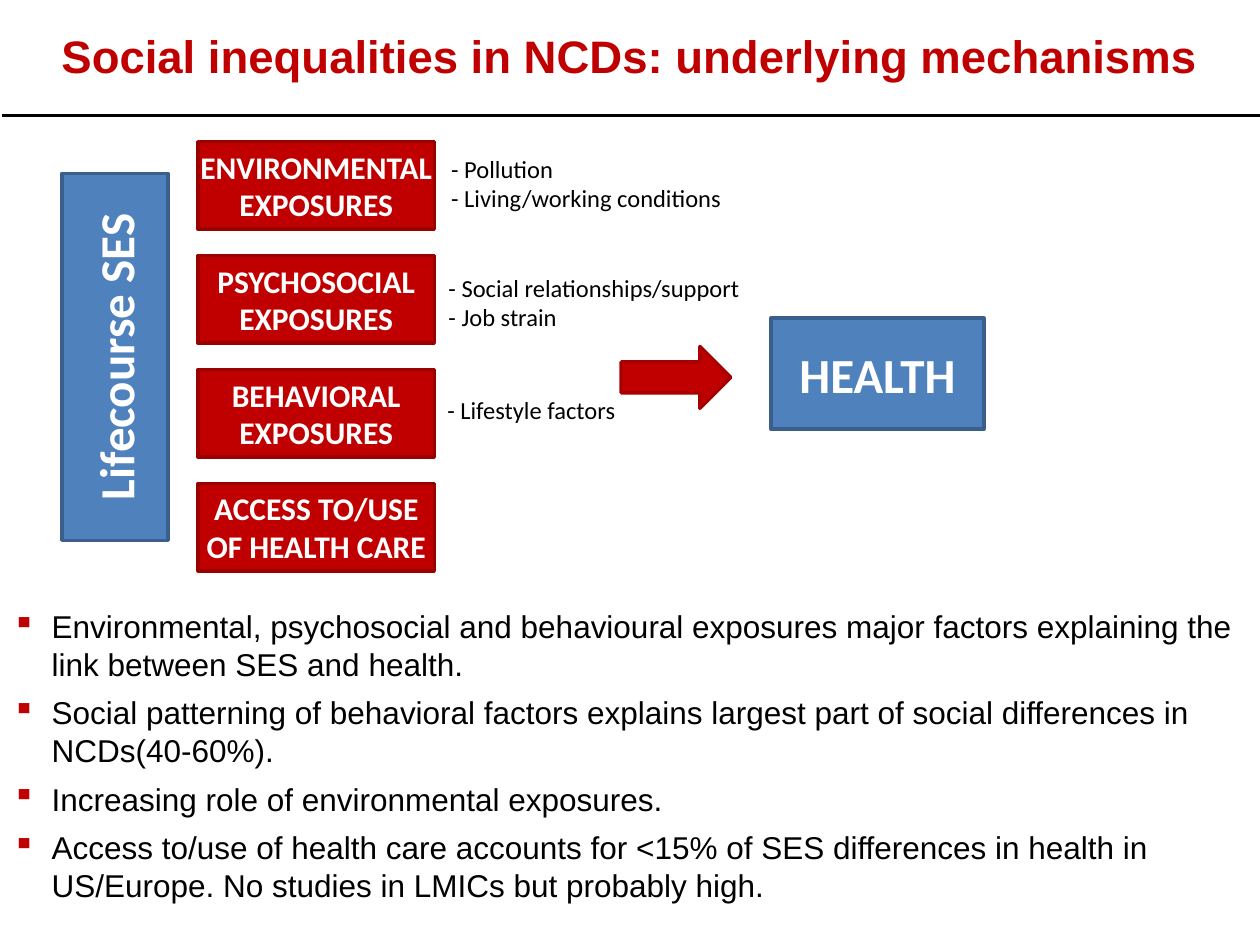
from lxml import etree
from pptx import Presentation
from pptx import util as u
from pptx.dml.color import RGBColor
from pptx.enum import shapes, text
from pptx.oxml.ns import qn

COLOURS = {
    "red": "C00000", "red edge": "990000", "arrow edge": "A80000",
    "blue": "4F81BD", "blue edge": "3A5F8C", "black": "000000", "white": "FFFFFF",
}


class Board:
    """Holds the colours and the slide being filled."""

    def __init__(self, slide, colours):
        self.slide = slide
        self.colours = colours

    def rgb(self, name):
        return RGBColor.from_string(self.colours[name])

    def set_text(self, frame, lines, size, font, colour, bold=False,
                 align=text.PP_ALIGN.LEFT, anchor=text.MSO_ANCHOR.MIDDLE,
                 insets=(0, 0, 0, 0)):
        frame.word_wrap = True
        frame.vertical_anchor = anchor
        (frame.margin_left, frame.margin_top,
         frame.margin_right, frame.margin_bottom) = map(u.Pt, insets)
        frame.text = "\n".join(lines)
        for paragraph in frame.paragraphs:
            paragraph.alignment = align
            paragraph.font.size = u.Pt(size)
            paragraph.font.name = font
            paragraph.font.bold = bold
            paragraph.font.color.rgb = self.rgb(colour)

    def label(self, box, lines, size, font, colour, **style):
        area = self.slide.shapes.add_textbox(*map(u.Pt, box))
        self.set_text(area.text_frame, lines, size, font, colour, **style)
        return area.text_frame

    def block(self, box, fill, edge, words="", size=18, kind=shapes.MSO_SHAPE.RECTANGLE,
              upward=False):
        block = self.slide.shapes.add_shape(kind, *map(u.Pt, box))
        block.shadow.inherit = False
        block.fill.solid()
        block.fill.fore_color.rgb = self.rgb(fill)
        block.line.color.rgb = self.rgb(edge)
        block.line.width = u.Pt(2)
        if words:
            self.set_text(block.text_frame, [words], size, "Calibri", "white", bold=True,
                          align=text.PP_ALIGN.CENTER)
        if upward:
            block.element.txBody.bodyPr.set("vert", "vert270")

    def rule(self, x1, x2, y, width):
        rule = self.slide.shapes.add_connector(
            shapes.MSO_CONNECTOR.STRAIGHT, *map(u.Pt, (x1, y, x2, y)))
        rule.line.color.rgb = self.rgb("black")
        rule.line.width = u.Pt(width)
        etree.SubElement(rule.element.spPr, qn("a:effectLst"))

    def bullets(self, box, items, indent):
        frame = self.label(box, items, 18, "Arial", "black", insets=(7.2, 3.6, 0, 3.6))
        for paragraph in frame.paragraphs:
            paragraph.space_before = u.Pt(6)
            props = paragraph._p.get_or_add_pPr()
            props.set("marL", str(u.Pt(indent)))
            props.set("indent", str(-u.Pt(indent)))
            tint = etree.Element(qn("a:buClr"))
            etree.SubElement(tint, qn("a:srgbClr"), val=self.colours["red"])
            mark = etree.Element(qn("a:buChar"), char="▪")
            # Bullet settings come after the spacing and before the font
            props.find(qn("a:spcBef")).addnext(tint)
            tint.addnext(mark)


def main():
    deck = Presentation()
    deck.slide_width, deck.slide_height = u.Pt(720), u.Pt(540)
    board = Board(deck.slides.add_slide(deck.slide_layouts[6]), COLOURS)

    # Heading
    board.label((0, 1, 720, 61), ["Social inequalities in NCDs: underlying mechanisms"],
                26, "Arial", "red", bold=True, align=text.PP_ALIGN.CENTER)
    board.rule(1, 721, 66, 2.25)

    # Cause
    board.block((35.3, 99.2, 60.7, 209.6), "blue", "blue edge", "Lifecourse SES", 28,
                upward=True)

    # Four pathways at an even pitch
    pathways = ["ENVIRONMENTAL EXPOSURES", "PSYCHOSOCIAL EXPOSURES",
                "BEHAVIORAL EXPOSURES", "ACCESS TO/USE OF HEALTH CARE"]
    for row, pathway in enumerate(pathways):
        board.block((113.2, 81 + 65.1 * row, 135, 50), "red", "red edge", pathway)

    # Examples beside the pathways
    examples = [
        (257.8, 88, ["- Pollution", "- Living/working conditions"]),
        (256.3, 155.8, ["- Social relationships/support", "- Job strain"]),
        (255.6, 225.6, ["- Lifestyle factors"]),
    ]
    for left, top, lines in examples:
        board.label((left, top, 185, 17 * len(lines)), lines, 14, "Calibri", "black",
                    anchor=text.MSO_ANCHOR.TOP)

    # Outcome
    board.block((440.6, 181.8, 121.6, 63.5), "blue", "blue edge", "HEALTH", 28)
    board.block((355, 198, 62.6, 35.3), "red", "arrow edge",
                kind=shapes.MSO_SHAPE.RIGHT_ARROW)

    # Findings
    board.bullets((0, 355, 720, 153.4), [
        "Environmental, psychosocial and behavioural exposures major factors explaining "
        "the link between SES and health.",
        "Social patterning of behavioral factors explains largest part of social "
        "differences in NCDs(40-60%).",
        "Increasing role of environmental exposures.",
        "Access to/use of health care accounts for <15% of SES differences in health in "
        "US/Europe. No studies in LMICs but probably high.",
    ], 22.5)

    deck.save("out.pptx")


if __name__ == "__main__":
    main()
